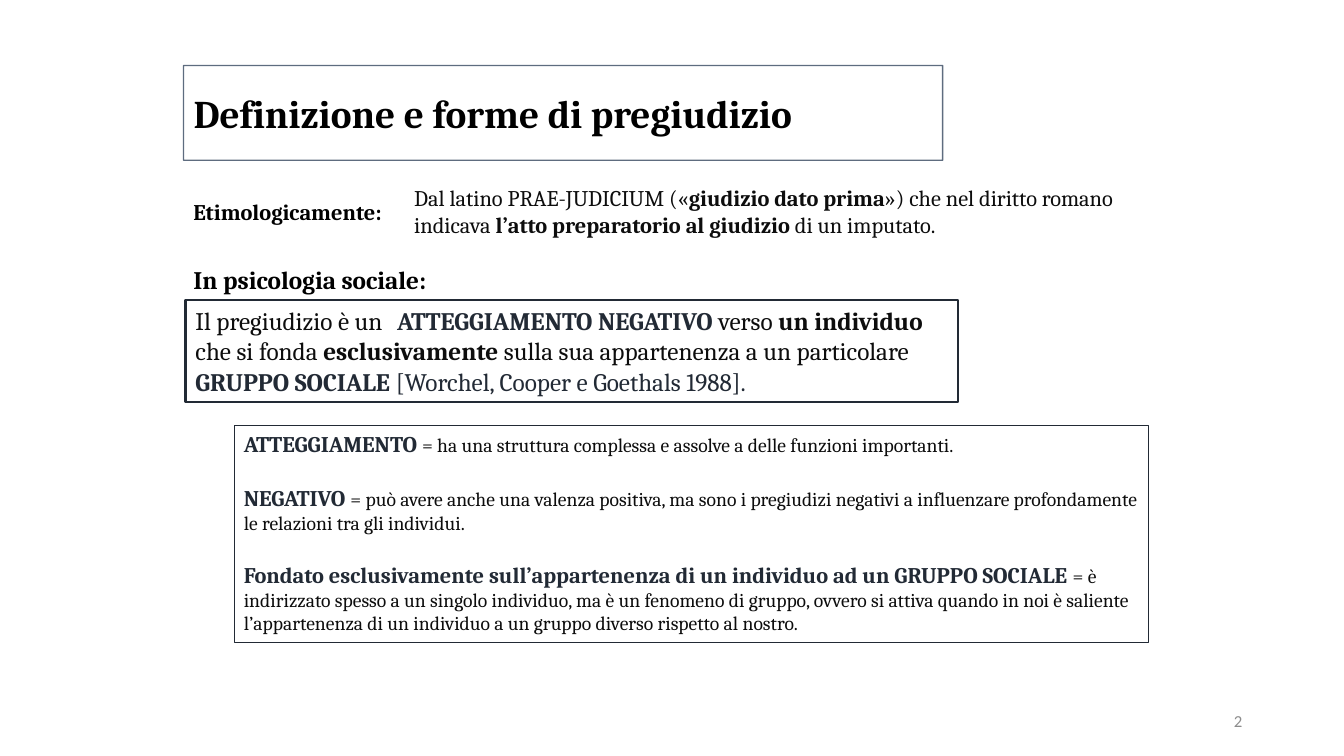
from dataclasses import dataclass

from lxml import etree
from pptx import Presentation
from pptx.dml.color import RGBColor
from pptx.enum import shapes, text
from pptx.oxml.ns import qn
from pptx.util import Inches, Pt


@dataclass(frozen=True)
class Theme:
    serif: str = "Cambria"
    sans: str = "Calibri"
    black: str = "000000"
    body: str = "0D0D0D"
    navy: str = "222A35"
    slate: str = "44546A"
    grey: str = "8C8C8C"
    white: str = "FFFFFF"
    title_size: int = 28
    lead_size: int = 18
    text_size: int = 16
    small_size: int = 14
    number_size: int = 12
    gap: int = 19


THEME = Theme()


def style(size, color, bold=False, font=THEME.serif):
    return dict(size=Pt(size), color=color, bold=bold, name=font)


def add_run(paragraph, words, look):
    run = paragraph.add_run()
    run.text = words
    for key, value in look.items():
        if key == "color":
            run.font.color.rgb = RGBColor.from_string(value)
        else:
            setattr(run.font, key, value)


def fill_text(shape, paragraphs, align=text.PP_ALIGN.LEFT, gap=0, **frame_format):
    """Write paragraphs, each a list of (words, look) pairs."""
    frame = shape.text_frame
    settings = dict(word_wrap=True, vertical_anchor=text.MSO_ANCHOR.TOP,
                    auto_size=text.MSO_AUTO_SIZE.SHAPE_TO_FIT_TEXT)
    for key, value in {**settings, **frame_format}.items():
        setattr(frame, key, value)
    for index, runs in enumerate(paragraphs):
        paragraph = frame.add_paragraph() if index else frame.paragraphs[0]
        paragraph.alignment = align
        if index and gap:
            paragraph.space_before = Pt(gap)
        for words, look in runs:
            add_run(paragraph, words, look)


def outline(shape, color, width):
    shape.line.color.rgb = RGBColor.from_string(color)
    shape.line.width = Pt(width)


def add_label(slide, left, top, width, height, paragraphs, **options):
    label = slide.shapes.add_textbox(*map(Inches, (left, top, width, height)))
    fill_text(label, paragraphs, **options)


def add_panel(slide, left, top, width, height, line_width, paragraphs, **options):
    panel = slide.shapes.add_shape(shapes.MSO_SHAPE.RECTANGLE,
                                   *map(Inches, (left, top, width, height)))
    panel.shadow.inherit = False
    panel.fill.solid()
    panel.fill.fore_color.rgb = RGBColor.from_string(THEME.white)
    outline(panel, THEME.navy, line_width)
    fill_text(panel, paragraphs, **options)


def place_title(slide, left, top, width, height):
    title = slide.shapes.title
    box = dict(left=left, top=top, width=width, height=height)
    for side, length in box.items():
        setattr(title, side, Inches(length))
    outline(title, THEME.slate, 1)
    # Slightly transparent border
    line_color = title.line._get_or_add_ln().find(".//" + qn("a:srgbClr"))
    etree.SubElement(line_color, qn("a:alpha")).set("val", "86000")
    fill_text(title, [[("Definizione e forme di pregiudizio",
                        style(THEME.title_size, THEME.black, True))]],
              vertical_anchor=text.MSO_ANCHOR.MIDDLE,
              auto_size=text.MSO_AUTO_SIZE.NONE)


def place_etymology(slide, left, top, width, height):
    plain = style(THEME.text_size, THEME.body)
    strong = style(THEME.text_size, THEME.body, True)
    heading = style(THEME.text_size, THEME.black, True)
    add_label(slide, left, top + 0.14, 2.14, 0.37,
              [[("Etimologicamente:", heading)]], word_wrap=False)
    indent = 2.19
    add_label(slide, left + indent, top, width - indent, height, [[
        ("Dal latino PRAE-JUDICIUM («", plain),
        ("giudizio dato prima", strong),
        ("») che nel diritto romano indicava ", plain),
        ("l’atto preparatorio al giudizio ", strong),
        ("di un imputato.", plain),
    ]])


def place_definition(slide, left, top, width, height):
    plain = style(THEME.lead_size, THEME.body)
    strong = style(THEME.lead_size, THEME.body, True)
    key_term = style(THEME.lead_size, THEME.navy, True)
    citation = style(THEME.lead_size, THEME.navy)
    heading = style(THEME.lead_size, THEME.black, True)
    heading_height = 0.41
    add_panel(slide, left + 0.02, top + heading_height, width - 0.02,
              height - heading_height, 1.5, [[
                  ("Il pregiudizio è un \t", plain),
                  ("ATTEGGIAMENTO NEGATIVO ", key_term),
                  ("verso ", plain),
                  ("un individuo ", strong),
                  ("che si fonda ", plain),
                  ("esclusivamente", strong),
                  (" sulla sua appartenenza a un particolare ", plain),
                  ("GRUPPO SOCIALE ", key_term),
                  ("[Worchel, Cooper e Goethals 1988].", citation),
              ]])
    add_label(slide, left, top, 2.6, 0.4,
              [[("In psicologia sociale:", heading)]], word_wrap=False)


def place_key_terms(slide, left, top, width, height):
    explanations = {
        "ATTEGGIAMENTO ":
            "= ha una struttura complessa e assolve a delle funzioni importanti.",
        "NEGATIVO ":
            "= può avere anche una valenza positiva, ma sono i pregiudizi negativi "
            "a influenzare profondamente le relazioni tra gli individui.",
        "Fondato esclusivamente sull’appartenenza di un individuo ad un GRUPPO SOCIALE ":
            "= è indirizzato spesso a un singolo individuo, ma è un fenomeno di gruppo, "
            "ovvero si attiva quando in noi è saliente l’appartenenza di un individuo "
            "a un gruppo diverso rispetto al nostro.",
    }
    term_look = style(THEME.text_size, THEME.navy, True)
    meaning_look = style(THEME.small_size, THEME.body)
    add_panel(slide, left, top, width, height, 0.5,
              [[(term, term_look), (meaning, meaning_look)]
               for term, meaning in explanations.items()], gap=THEME.gap)


def place_number(slide, left, top, width, height):
    look = style(THEME.number_size, THEME.grey, font=THEME.sans)
    add_label(slide, left, top, width, height, [[("2", look)]],
              align=text.PP_ALIGN.RIGHT, vertical_anchor=text.MSO_ANCHOR.MIDDLE,
              auto_size=text.MSO_AUTO_SIZE.NONE)


def main():
    deck = Presentation()
    deck.slide_width, deck.slide_height = Inches(13.33), Inches(7.5)
    slide = deck.slides.add_slide(deck.slide_layouts[5])
    margin = 1.82
    place_title(slide, margin, 0.65, 7.53, 0.94)
    place_etymology(slide, margin, 1.78, 9.72, 0.64)
    place_definition(slide, margin, 2.57, 7.68, 1.42)
    place_key_terms(slide, margin + 0.5, 4.22, 9.07, 2.15)
    place_number(slide, 9.42, 6.95, 3, 0.4)
    deck.save("out.pptx")


if __name__ == "__main__":
    main()
